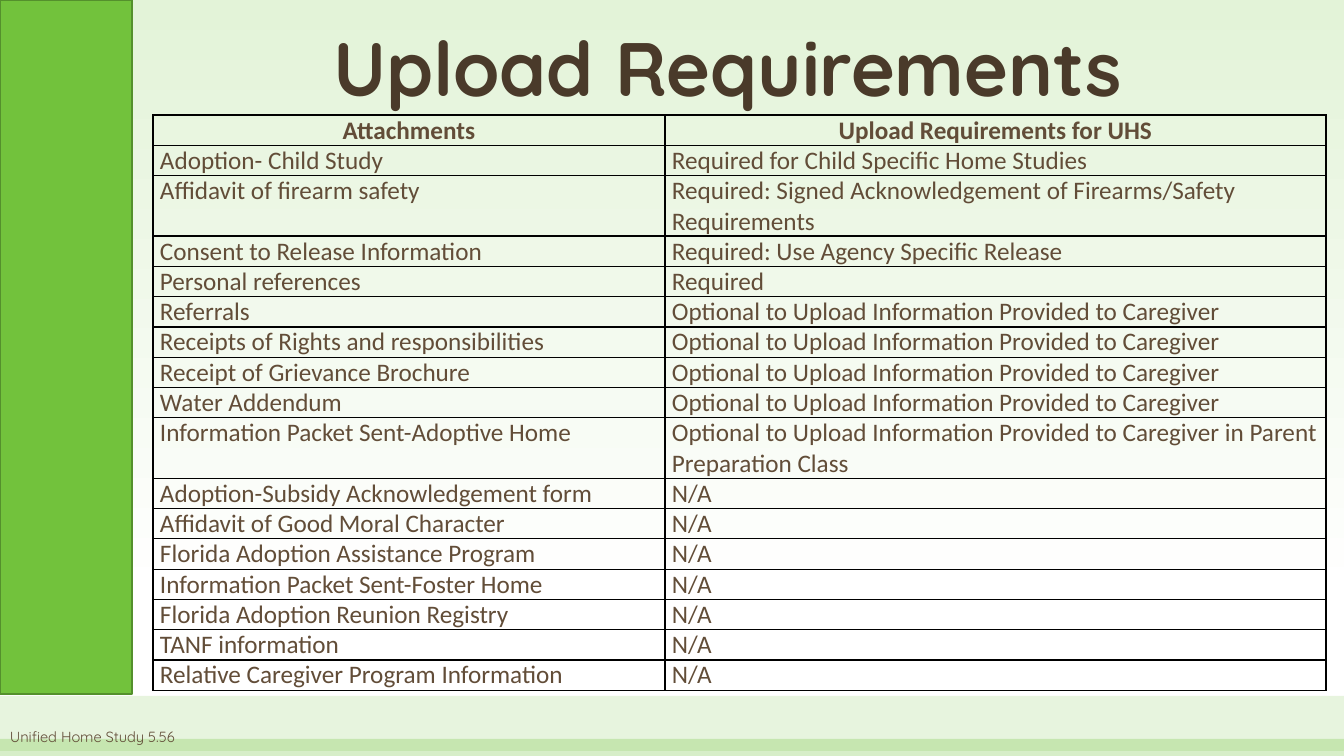
from dataclasses import dataclass

from lxml import etree
from pptx import Presentation
from pptx.dml.color import RGBColor
from pptx.enum.shapes import MSO_SHAPE
from pptx.enum.text import MSO_ANCHOR, PP_ALIGN
from pptx.oxml.ns import qn
from pptx.util import Emu, Pt

RECT = MSO_SHAPE.RECTANGLE
TOP, BOTTOM = MSO_ANCHOR.TOP, MSO_ANCHOR.BOTTOM
LEFT, CENTER = PP_ALIGN.LEFT, PP_ALIGN.CENTER
EMU_PER_PX = 914400 / 100.8


@dataclass(frozen=True)
class Theme:
    green: str = "72C23C"
    green_edge: str = "54902C"
    pale: str = "E3F3D8"
    white: str = "FFFFFF"
    black: str = "000000"
    title: str = "4A3A2A"
    body: str = "624D38"
    display_font: str = "Quicksand"
    table_font: str = "Calibri"
    title_size: float = 54
    table_size: float = 18
    footer_size: float = 10.5


THEME = Theme()
OPTIONAL = "Optional to Upload Information Provided to Caregiver"
NA = "N/A"
ROWS = [
    ("Attachments", "Upload Requirements for UHS"),
    ("Adoption- Child Study", "Required for Child Specific Home Studies"),
    ("Affidavit of firearm safety",
     "Required: Signed Acknowledgement of Firearms/Safety Requirements"),
    ("Consent to Release Information", "Required: Use Agency Specific Release"),
    ("Personal references", "Required"),
    ("Referrals", OPTIONAL),
    ("Receipts of Rights and responsibilities", OPTIONAL),
    ("Receipt of Grievance Brochure", OPTIONAL),
    ("Water Addendum", OPTIONAL),
    ("Information Packet Sent-Adoptive Home", OPTIONAL + " in Parent Preparation Class"),
    ("Adoption-Subsidy Acknowledgement form", NA),
    ("Affidavit of Good Moral Character", NA),
    ("Florida Adoption Assistance Program", NA),
    ("Information Packet Sent-Foster Home", NA),
    ("Florida Adoption Reunion Registry", NA),
    ("TANF information", NA),
    ("Relative Caregiver Program Information", NA),
]
COL_WIDTHS = (512, 661)
LINE_HEIGHT = 28
WRAP_LENGTH = 55


def px(n):
    return Emu(round(n * EMU_PER_PX))


def rgb(color):
    return RGBColor.from_string(color)


def set_background(s):
    fill = s.background.fill
    fill.gradient()
    fill.gradient_angle = 270
    stops = ((0, THEME.pale), (0.79, THEME.white))
    for stop, (position, color) in zip(fill.gradient_stops, stops):
        stop.position = position
        stop.color.rgb = rgb(color)


def add_panel(s, x, y, w, h, alpha=100, edge=None):
    sp = s.shapes.add_shape(RECT, px(x), px(y), px(w), px(h))
    sp.shadow.inherit = False
    sp.fill.solid()
    sp.fill.fore_color.rgb = rgb(THEME.green)
    if alpha < 100:
        color = sp.fill._xPr.find(qn("a:solidFill"))[0]
        etree.SubElement(color, qn("a:alpha"), val=str(alpha * 1000))
    if edge:
        sp.line.color.rgb = rgb(edge)
        sp.line.width = Pt(1)
    else:
        sp.line.fill.background()


def write(tf, text, font, size, color, bold=False, align=LEFT):
    tf.text = text
    p = tf.paragraphs[0]
    p.alignment = align
    r = p.runs[0]
    r.font.name = font
    r.font.size = Pt(size)
    r.font.bold = bold
    r.font.color.rgb = rgb(color)
    return p


def add_text(s, x, y, w, h, text, size, color, bold=False, align=LEFT, anchor=TOP):
    tf = s.shapes.add_textbox(px(x), px(y), px(w), px(h)).text_frame
    tf.word_wrap = True
    tf.vertical_anchor = anchor
    return write(tf, text, THEME.display_font, size, color, bold, align)


def set_borders(cell):
    tc_pr = cell._tc.get_or_add_tcPr()
    for i, side in enumerate(("lnL", "lnR", "lnT", "lnB")):
        ln = etree.Element(qn(f"a:{side}"), w=str(Pt(1)))
        solid = etree.SubElement(ln, qn("a:solidFill"))
        etree.SubElement(solid, qn("a:srgbClr"), val=THEME.black)
        tc_pr.insert(i, ln)


def add_table(s, x, y):
    heights = [LINE_HEIGHT * (2 if len(row[1]) > WRAP_LENGTH else 1) for row in ROWS]
    frame = s.shapes.add_table(len(ROWS), len(COL_WIDTHS), px(x), px(y),
                               px(sum(COL_WIDTHS)), px(sum(heights)))
    table = frame.table
    table.first_row = False
    table.horz_banding = False
    for column, width in zip(table.columns, COL_WIDTHS):
        column.width = px(width)
    for i, (values, height) in enumerate(zip(ROWS, heights)):
        table.rows[i].height = px(height)
        header = i == 0
        for cell, text in zip(table.rows[i].cells, values):
            cell.margin_left = cell.margin_right = px(7)
            cell.margin_top = cell.margin_bottom = 0
            cell.fill.background()
            set_borders(cell)
            write(cell.text_frame, text, THEME.table_font, THEME.table_size,
                  THEME.body, header, CENTER if header else LEFT)


def main():
    prs = Presentation()
    prs.slide_width, prs.slide_height = px(1344), px(756)
    s = prs.slides.add_slide(prs.slide_layouts[6])
    set_background(s)
    add_panel(s, 0, 696, 1344, 55, alpha=17)
    add_panel(s, 0, 739, 1344, 17, alpha=28)
    p = add_text(s, 204, -2, 1048, 120, "Upload Requirements", THEME.title_size,
                 THEME.title, bold=True, align=CENTER, anchor=BOTTOM)
    p.line_spacing = 0.9
    add_text(s, 0, 723, 301, 33, "Unified Home Study 5.56", THEME.footer_size, THEME.body)
    add_panel(s, 0, 0, 132, 694, edge=THEME.green_edge)
    add_table(s, 153, 115)
    prs.save("out.pptx")


if __name__ == "__main__":
    main()
